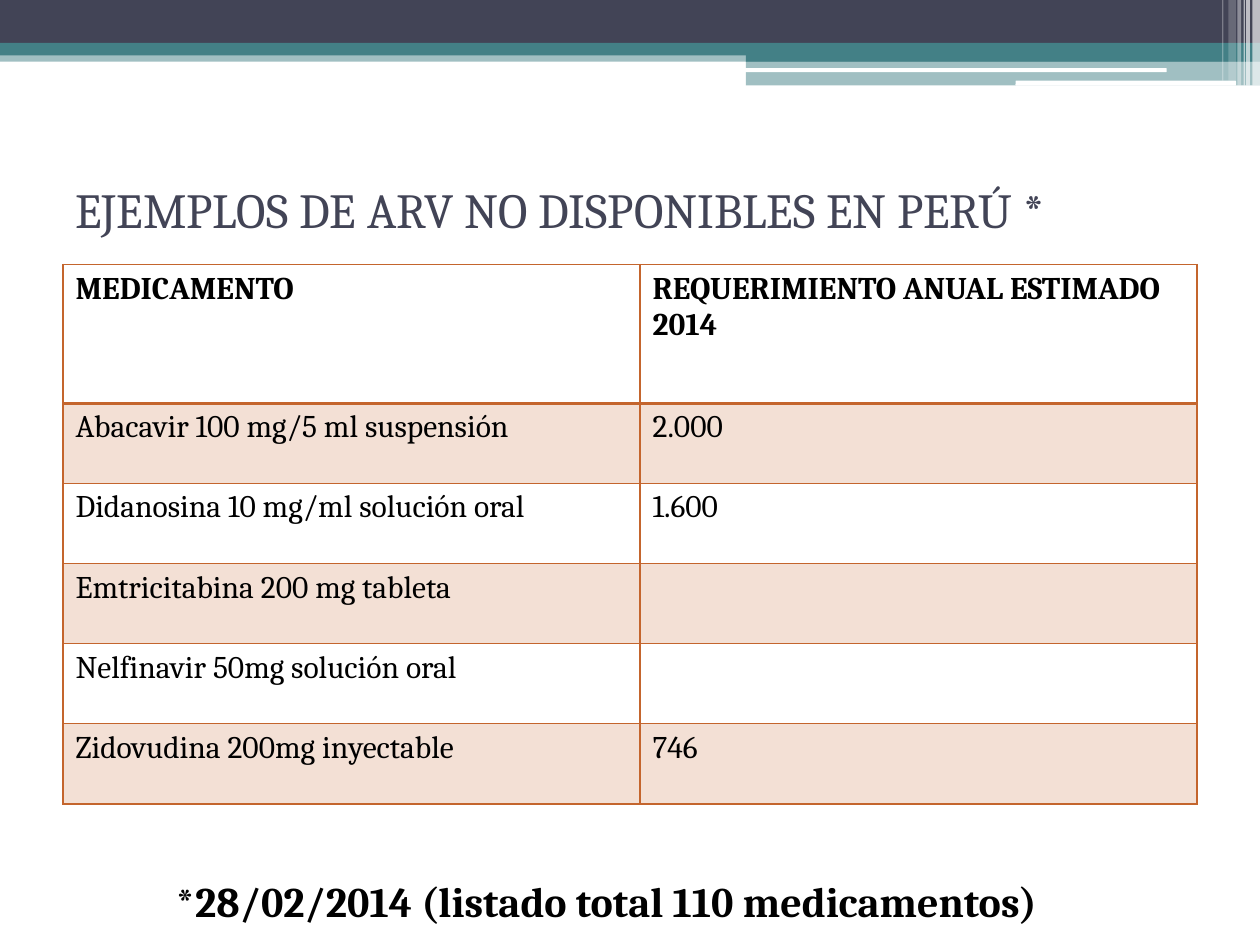
from dataclasses import dataclass

from lxml import etree
from pptx import Presentation
from pptx.dml.color import RGBColor
from pptx.enum.shapes import MSO_SHAPE
from pptx.enum.text import MSO_ANCHOR
from pptx.oxml.ns import qn
from pptx.util import Inches, Pt

RECT, ROUND = MSO_SHAPE.RECTANGLE, MSO_SHAPE.ROUNDED_RECTANGLE
MIDDLE, TOP = MSO_ANCHOR.MIDDLE, MSO_ANCHOR.TOP
SLIDE_W, SLIDE_H = Inches(10), Inches(7.5)


@dataclass(frozen=True)
class Theme:
    font: str = "Cambria"
    navy: str = "424456"
    teal: str = "438086"
    orange: str = "C4652D"
    white: str = "FFFFFF"
    black: str = "000000"
    title: int = 28
    note: int = 24
    cell: int = 18


THEME = Theme()


@dataclass(frozen=True)
class Box:
    """Left, top, width and height in percent of the slide."""
    x: float
    y: float
    w: float
    h: float

    def emu(self) -> tuple[int, int, int, int]:
        return across(self.x), down(self.y), across(self.w), down(self.h)


@dataclass(frozen=True)
class Bar:
    box: Box
    color: str
    alpha: int = 100
    kind: int = RECT


@dataclass(frozen=True)
class Stripe:
    """Translucent white band at the right end of the header."""
    x: float
    w: float
    h: float
    alpha: int


BARS = (
    Bar(Box(0, 5.33, 100, 1.2), THEME.teal, 50),
    Bar(Box(0, 0, 100, 4.53), THEME.navy),
    Bar(Box(0, 4.53, 100, 1.33), THEME.teal),
    Bar(Box(59.2, 5.2, 40.8, 1.33), THEME.teal),
    Bar(Box(59.2, 6.45, 40.8, 2.6), THEME.teal, 50),
    Bar(Box(59.1, 7.2, 33.5, 0.44), THEME.white, kind=ROUND),
    Bar(Box(80.6, 8.53, 17.5, 0.53), THEME.white, kind=ROUND),
)
STRIPES = (
    Stripe(99.4, 0.6, 9.07, 65),
    Stripe(98.9, 0.3, 9.07, 65),
    Stripe(98.7, 0.1, 9.07, 60),
    Stripe(98.2, 0.3, 9.07, 40),
    Stripe(97.5, 0.6, 8.53, 20),
    Stripe(97, 0.1, 8.53, 30),
)

COLUMNS = (45.8, 44.2)
HEADER_ROW, BODY_ROW = 14.67, 8.48
ROWS = (
    ("MEDICAMENTO", "REQUERIMIENTO ANUAL ESTIMADO 2014"),
    ("Abacavir 100 mg/5 ml suspensión", "2.000"),
    ("Didanosina 10 mg/ml solución oral", "1.600"),
    ("Emtricitabina 200 mg tableta", ""),
    ("Nelfinavir 50mg solución oral", ""),
    ("Zidovudina 200mg inyectable", "746"),
)


def across(percent: float) -> int:
    return round(SLIDE_W * percent / 100)


def down(percent: float) -> int:
    return round(SLIDE_H * percent / 100)


def paint(fill, holder, color: str, alpha: int) -> None:
    """Fill solidly; holder is the XML element that contains the fill."""
    fill.solid()
    fill.fore_color.rgb = RGBColor.from_string(color)
    if alpha < 100:
        clr = holder.find(qn("a:solidFill"))[0]
        etree.SubElement(clr, qn("a:alpha"), val=str(alpha * 1000))


def write(tf, text: str, size: int, color: str, bold: bool = False) -> None:
    r = tf.paragraphs[0].add_run()
    r.text = text
    for name, value in {"name": THEME.font, "size": Pt(size), "bold": bold}.items():
        setattr(r.font, name, value)
    r.font.color.rgb = RGBColor.from_string(color)


def add_bar(slide, bar: Bar) -> None:
    sp = slide.shapes.add_shape(bar.kind, *bar.box.emu())
    sp.shadow.inherit = False
    sp.line.fill.background()
    paint(sp.fill, sp._element.spPr, bar.color, bar.alpha)


def add_text(slide, box: Box, text: str, size: int, color: str,
             bold: bool = False, anchor=TOP, wrap: bool = True) -> None:
    tf = slide.shapes.add_textbox(*box.emu()).text_frame
    tf.word_wrap, tf.vertical_anchor = wrap, anchor
    write(tf, text, size, color, bold)


def set_borders(cell, widths: dict[str, int]) -> None:
    """Put the border lines ahead of the fill, as the schema orders them."""
    tcPr = cell._tc.get_or_add_tcPr()
    for i, (side, width) in enumerate(widths.items()):
        ln = etree.Element(qn(f"a:ln{side}"), w=str(Pt(width)))
        fill = etree.SubElement(ln, qn("a:solidFill"))
        etree.SubElement(fill, qn("a:srgbClr"), val=THEME.orange)
        tcPr.insert(i, ln)


def add_medicine_table(slide) -> None:
    heights = [HEADER_ROW] + [BODY_ROW] * (len(ROWS) - 1)
    box = Box(5, 28, sum(COLUMNS), sum(heights))
    table = slide.shapes.add_table(len(ROWS), len(COLUMNS), *box.emu()).table
    table.first_row = table.horz_banding = False
    for col, width in zip(table.columns, COLUMNS):
        col.width = across(width)
    for i, (row, height, texts) in enumerate(zip(table.rows, heights, ROWS)):
        row.height = down(height)
        for cell, text in zip(row.cells, texts):
            if i % 2:
                paint(cell.fill, cell._tc.get_or_add_tcPr(), THEME.orange, 20)
            else:
                cell.fill.background()
            set_borders(cell, {"L": 1, "R": 1, "T": 2 if i == 1 else 1,
                               "B": 2 if i == 0 else 1})
            if text:
                write(cell.text_frame, text, THEME.cell, THEME.black, bold=i == 0)


def main() -> None:
    prs = Presentation()
    prs.slide_width, prs.slide_height = SLIDE_W, SLIDE_H
    slide = prs.slides.add_slide(prs.slide_layouts[6])
    for bar in BARS:
        add_bar(slide, bar)
    for s in STRIPES:
        add_bar(slide, Bar(Box(s.x, 0, s.w, s.h), THEME.white, s.alpha))
    add_text(slide, Box(5, 14.27, 90, 15.6), "EJEMPLOS DE ARV NO DISPONIBLES EN PERÚ *",
             THEME.title, THEME.navy, anchor=MIDDLE)
    add_medicine_table(slide)
    add_text(slide, Box(13, 92, 75, 6.67), "*28/02/2014 (listado total 110 medicamentos)",
             THEME.note, THEME.black, bold=True, wrap=False)
    prs.save("out.pptx")


if __name__ == "__main__":
    main()
